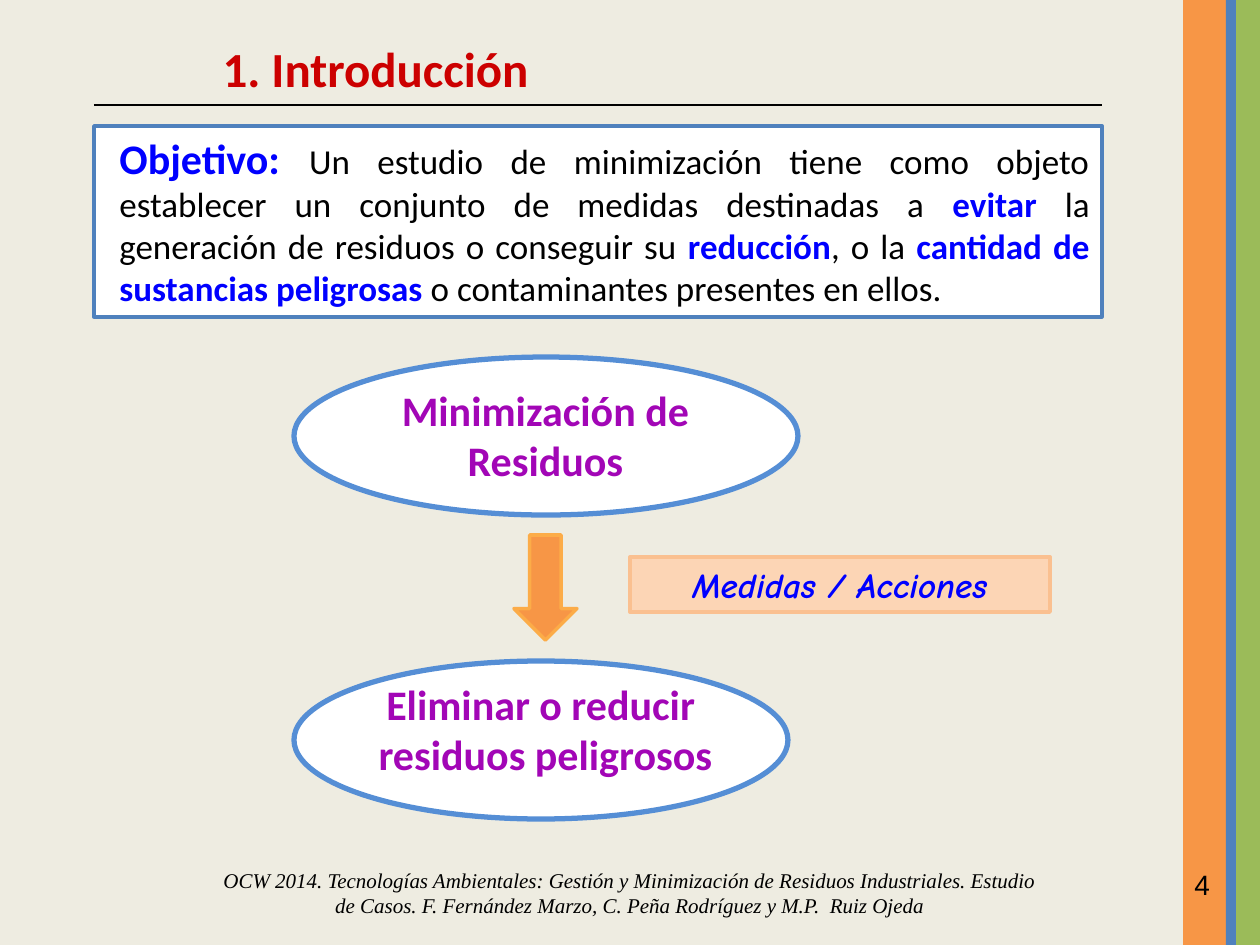
from lxml.etree import SubElement
from pptx import Presentation
from pptx.dml.color import RGBColor
from pptx.enum.shapes import MSO_CONNECTOR, MSO_SHAPE
from pptx.enum.text import MSO_ANCHOR, MSO_AUTO_SIZE, PP_ALIGN
from pptx.oxml.ns import qn
from pptx.util import Pt

PX = 914400 / 126  # EMU per pixel
COLORS = {
    "background": "EEECE1", "white": "FFFFFF", "black": "000000",
    "orange": "F79646", "orange_line": "FCAC48",
    "peach": "FCD5B5", "peach_line": "FAC090",
    "blue": "4F81BD", "ellipse_line": "558ED5", "green": "9BBB59",
    "title": "CC0000", "keyword": "0000FF", "concept": "A206B6",
}


def emu(*lengths):
    return [round(length * PX) for length in lengths]


def color(name):
    return RGBColor.from_string(COLORS[name])


class SlideBuilder:
    def __init__(self, presentation):
        self.slide = presentation.slides.add_slide(presentation.slide_layouts[5])
        fill = self.slide.background.fill
        fill.solid()
        fill.fore_color.rgb = color("background")

    def style(self, font, size, ink, name="Calibri", bold=False, italic=False):
        font.name, font.size = name, Pt(size)
        font.bold, font.italic = bold, italic
        font.color.rgb = color(ink)

    def set_text(self, shape, lines, align=PP_ALIGN.LEFT, anchor=MSO_ANCHOR.TOP, **font):
        frame = shape.text_frame
        frame.word_wrap = True
        frame.auto_size = MSO_AUTO_SIZE.NONE
        frame.vertical_anchor = anchor
        frame.text = "\n".join(lines)
        for paragraph in frame.paragraphs:
            paragraph.alignment = align
            self.style(paragraph.font, **font)

    def title(self, text, box, **font):
        title = self.slide.shapes.title
        title.left, title.top, title.width, title.height = emu(*box)
        self.set_text(title, [text], **font)

    def text(self, lines, box, **options):
        self.set_text(self.slide.shapes.add_textbox(*emu(*box)), lines, **options)

    def shape(self, kind, box, fill, line=None, line_width=2):
        shape = self.slide.shapes.add_shape(kind, *emu(*box))
        shape.shadow.inherit = False
        shape.fill.solid()
        shape.fill.fore_color.rgb = color(fill)
        if line:
            shape.line.color.rgb = color(line)
            shape.line.width = Pt(line_width)
        else:
            shape.line.fill.background()
        return shape

    def rule(self, left, right, y):
        line = self.slide.shapes.add_connector(
            MSO_CONNECTOR.STRAIGHT, *emu(left, y, right, y))
        line.line.color.rgb = color("black")
        line.line.width = Pt(0.75)
        SubElement(line._element.spPr, qn("a:effectLst"))

    def objective(self, shape, heading, parts):
        """Fill in a justified paragraph; parts are (text, is_keyword) pairs."""
        self.set_text(shape, [""], PP_ALIGN.JUSTIFY, size=20, ink="black")
        paragraph = shape.text_frame.paragraphs[0]
        paragraph._p.get_or_add_pPr().set("marL", str(emu(13)[0]))
        runs = [(heading, True, 24)] + [(text, key, 20) for text, key in parts]
        for text, is_keyword, size in runs:
            run = paragraph.add_run()
            run.text = text
            self.style(run.font, size, "keyword" if is_keyword else "black",
                       bold=is_keyword)


def main():
    presentation = Presentation()
    presentation.slide_width, presentation.slide_height = emu(1260, 945)
    builder = SlideBuilder(presentation)

    for left, width, fill in [(1183, 43, "orange"), (1236, 24, "green"),
                              (1226, 10, "blue")]:
        builder.shape(MSO_SHAPE.RECTANGLE, (left, 0, width, 945), fill)
    builder.rule(94, 1102, 105)
    builder.title("1. Introducción", (210, 32, 504, 72),
                  size=28, ink="title", bold=True)
    builder.text(["4"], (1182, 861, 78, 66), size=16, ink="black", name="Arial")
    builder.text(
        ["OCW 2014. Tecnologías Ambientales: Gestión y Minimización de Residuos "
         "Industriales. Estudio de Casos. F. Fernández Marzo, C. Peña Rodríguez "
         "y M.P.  Ruiz Ojeda"],
        (210, 861, 840, 63), align=PP_ALIGN.CENTER, anchor=MSO_ANCHOR.MIDDLE,
        size=12, ink="black", name="Times New Roman", italic=True)

    panel = builder.shape(MSO_SHAPE.RECTANGLE, (94, 126, 1008, 191), "white", "blue")
    builder.objective(panel, "Objetivo: ", [
        ("Un estudio de minimización tiene como objeto establecer un conjunto "
         "de medidas destinadas a ", False),
        ("evitar ", True),
        ("la generación de residuos o conseguir su ", False),
        ("reducción", True),
        (", o la ", False),
        ("cantidad de sustancias peligrosas", True),
        (" o contaminantes presentes en ellos.", False),
    ])

    builder.shape(MSO_SHAPE.DOWN_ARROW, (514, 535, 63, 105), "orange", "orange_line")
    measures = builder.shape(MSO_SHAPE.RECTANGLE, (630, 557, 420, 55),
                             "peach", "peach_line", 2.25)
    builder.set_text(measures, ["Medidas / Acciones"], PP_ALIGN.CENTER, size=20,
                     ink="keyword", name="Comic Neue", bold=True, italic=True)

    for top, width, text_top, lines in [
        (357, 504, 378, ["Minimización de Residuos"]),
        (661, 494, 672, ["Eliminar o reducir ", "residuos peligrosos"]),
    ]:
        builder.shape(MSO_SHAPE.OVAL, (294, top, width, 158),
                      "white", "ellipse_line", 3)
        builder.text(lines, (325, text_top, 441, 115), align=PP_ALIGN.CENTER,
                     size=24, ink="concept", bold=True)

    presentation.save("out.pptx")


if __name__ == "__main__":
    main()
